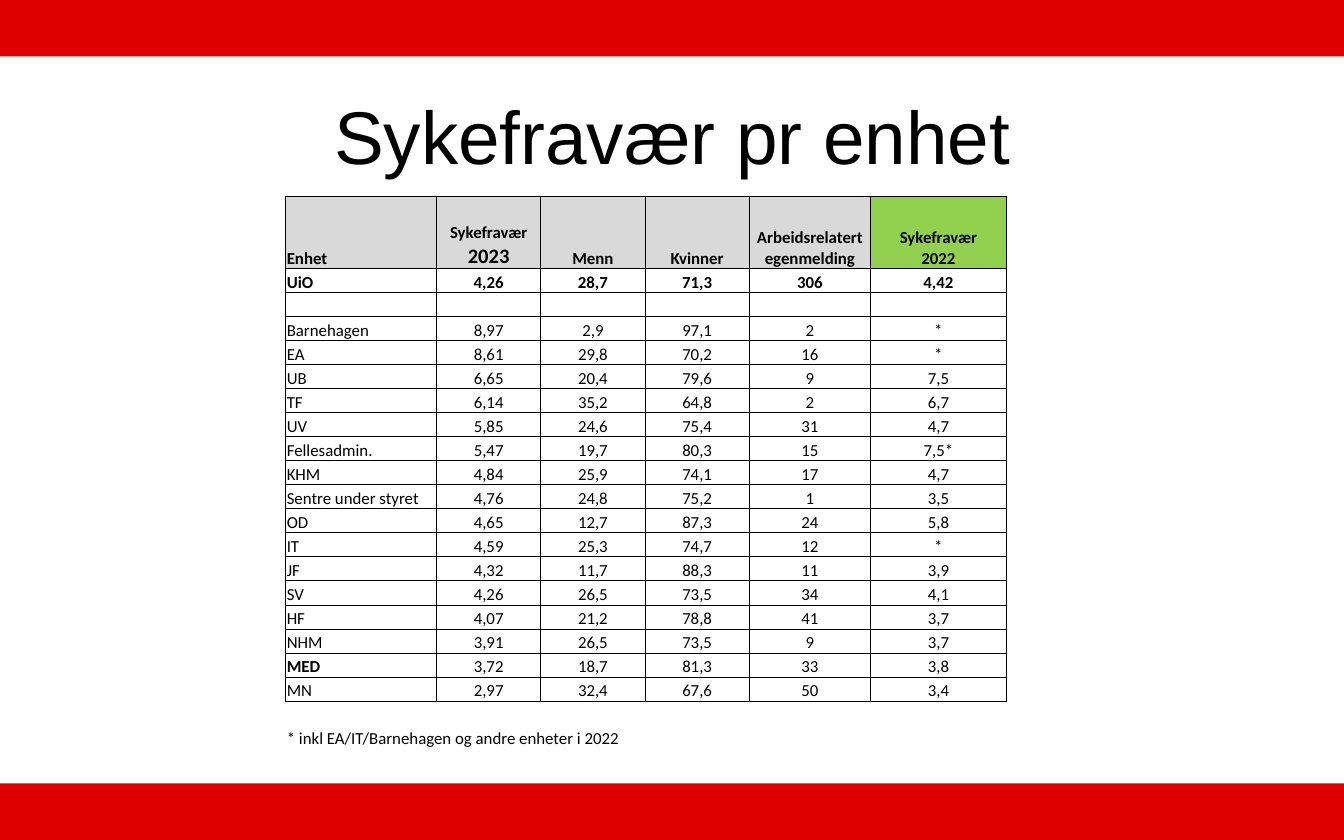
"""Build the slide showing sick leave per unit."""
from dataclasses import dataclass

from lxml.etree import SubElement
from pptx import Presentation
from pptx.dml.color import RGBColor
from pptx.enum.shapes import MSO_SHAPE
from pptx.enum.text import MSO_ANCHOR, PP_ALIGN
from pptx.oxml.ns import qn
from pptx.util import Cm, Pt


@dataclass(frozen=True)
class Theme:
    red: str = "DE0000"
    black: str = "000000"
    grey: str = "D9D9D9"
    green: str = "92D050"
    title_font: str = "Arial"
    table_font: str = "Calibri"
    title_size: int = 40
    cell_size: int = 9
    year_size: int = 11
    border: float = 0.5


THEME = Theme()
SLIDE_W, SLIDE_H, BAR_H = 25.4, 15.88, 1.07
TABLE_LEFT, TABLE_TOP, TABLE_H, HEAD_H = 5.4, 3.72, 10.44, 1.36
COL_WIDTHS = (2.85, 1.97, 1.97, 1.97, 2.29, 2.57)
HEADER = ("Enhet", "Sykefravær\n2023", "Menn", "Kvinner",
          "Arbeidsrelatert\negenmelding", "Sykefravær\n2022")
TOTAL = ("UiO", "4,26", "28,7", "71,3", "306", "4,42")
BLANK = ("",) * len(HEADER)
UNITS = (
    ("Barnehagen", "8,97", "2,9", "97,1", "2", "*"),
    ("EA", "8,61", "29,8", "70,2", "16", "*"),
    ("UB", "6,65", "20,4", "79,6", "9", "7,5"),
    ("TF", "6,14", "35,2", "64,8", "2", "6,7"),
    ("UV", "5,85", "24,6", "75,4", "31", "4,7"),
    ("Fellesadmin.", "5,47", "19,7", "80,3", "15", "7,5*"),
    ("KHM", "4,84", "25,9", "74,1", "17", "4,7"),
    ("Sentre under styret", "4,76", "24,8", "75,2", "1", "3,5"),
    ("OD", "4,65", "12,7", "87,3", "24", "5,8"),
    ("IT", "4,59", "25,3", "74,7", "12", "*"),
    ("JF", "4,32", "11,7", "88,3", "11", "3,9"),
    ("SV", "4,26", "26,5", "73,5", "34", "4,1"),
    ("HF", "4,07", "21,2", "78,8", "41", "3,7"),
    ("NHM", "3,91", "26,5", "73,5", "9", "3,7"),
    ("MED", "3,72", "18,7", "81,3", "33", "3,8"),
    ("MN", "2,97", "32,4", "67,6", "50", "3,4"),
)
FOOTNOTE = ("* inkl EA/IT/Barnehagen og andre enheter i 2022",) + BLANK[1:]
GRID = (HEADER, TOTAL, BLANK) + UNITS
ROWS = GRID + (BLANK, FOOTNOTE)


def write(tf, text, font=THEME.table_font, size=THEME.cell_size,
          last_size=None, bold=False, align=PP_ALIGN.LEFT):
    """Write each line of text as a formatted paragraph."""
    lines = text.split("\n")
    for i, line in enumerate(lines):
        p = tf.add_paragraph() if i else tf.paragraphs[0]
        p.alignment = align
        pt = last_size if last_size and i == len(lines) - 1 else size
        if not line:
            p._p.get_or_add_endParaRPr().set("sz", str(pt * 100))
            continue
        r = p.add_run()
        r.text = line
        r.font.name, r.font.size, r.font.bold = font, Pt(pt), bold
        r.font.color.rgb = RGBColor.from_string(THEME.black)


def add_bar(s, top):
    """Add a full-width red bar."""
    sp = s.shapes.add_shape(MSO_SHAPE.RECTANGLE, 0, Cm(top), Cm(SLIDE_W), Cm(BAR_H))
    sp.shadow.inherit = False
    sp.fill.solid()
    sp.fill.fore_color.rgb = RGBColor.from_string(THEME.red)
    sp.line.fill.background()


def add_title(s, text):
    """Place and fill the title placeholder."""
    sp = s.shapes.title
    sp.left, sp.top, sp.width, sp.height = Cm(1.27), Cm(1.35), Cm(22.86), Cm(2.39)
    sp.text_frame.vertical_anchor = MSO_ANCHOR.MIDDLE
    write(sp.text_frame, text, font=THEME.title_font, size=THEME.title_size,
          align=PP_ALIGN.CENTER)


def set_borders(cell, sides):
    """Draw the given sides of a cell and hide the others."""
    tc_pr = cell._tc.get_or_add_tcPr()
    for side in "LRTB":
        ln = SubElement(tc_pr, qn(f"a:ln{side}"), w=str(Pt(THEME.border)))
        if side in sides:
            fill = SubElement(ln, qn("a:solidFill"))
            SubElement(fill, qn("a:srgbClr"), val=THEME.black)
        else:
            SubElement(ln, qn("a:noFill"))


def style_cell(cell, sides, fill):
    """Set the borders, fill, margins and anchor of a cell."""
    set_borders(cell, sides)
    if fill:
        cell.fill.solid()
        cell.fill.fore_color.rgb = RGBColor.from_string(fill)
    else:
        cell.fill.background()
    cell.margin_left = cell.margin_right = cell.margin_top = Cm(0.02)
    cell.margin_bottom = 0
    cell.vertical_anchor = MSO_ANCHOR.BOTTOM


def add_unit_table(s):
    """Add the table of sick leave per unit with its footnote row."""
    table = s.shapes.add_table(len(ROWS), len(HEADER), Cm(TABLE_LEFT), Cm(TABLE_TOP),
                               Cm(sum(COL_WIDTHS)), Cm(TABLE_H)).table
    table.first_row = table.horz_banding = False
    for col, width in zip(table.columns, COL_WIDTHS):
        col.width = Cm(width)
    for i, row in enumerate(table.rows):
        row.height = Cm(HEAD_H if i == 0 else (TABLE_H - HEAD_H) / (len(ROWS) - 1))
    for i, values in enumerate(ROWS):
        sides = "LRTB" if i < len(GRID) else "T" if i == len(GRID) else ""
        for j, text in enumerate(values):
            cell = table.cell(i, j)
            last = j == len(HEADER) - 1
            head_fill = THEME.green if last else THEME.grey
            style_cell(cell, sides, head_fill if i == 0 else None)
            write(cell.text_frame, text, bold=i < 2 or text == "MED",
                  last_size=THEME.year_size if text.endswith("\n2023") else None,
                  align=PP_ALIGN.CENTER if j else PP_ALIGN.LEFT)
    note_row = len(ROWS) - 1
    table.cell(note_row, 0).merge(table.cell(note_row, 3))


def main():
    """Build and save the presentation."""
    prs = Presentation()
    prs.slide_width, prs.slide_height = Cm(SLIDE_W), Cm(SLIDE_H)
    s = prs.slides.add_slide(prs.slide_layouts[5])
    for top in (SLIDE_H - BAR_H, 0):
        add_bar(s, top)
    add_title(s, "Sykefravær pr enhet")
    add_unit_table(s)
    prs.save("out.pptx")


if __name__ == "__main__":
    main()
